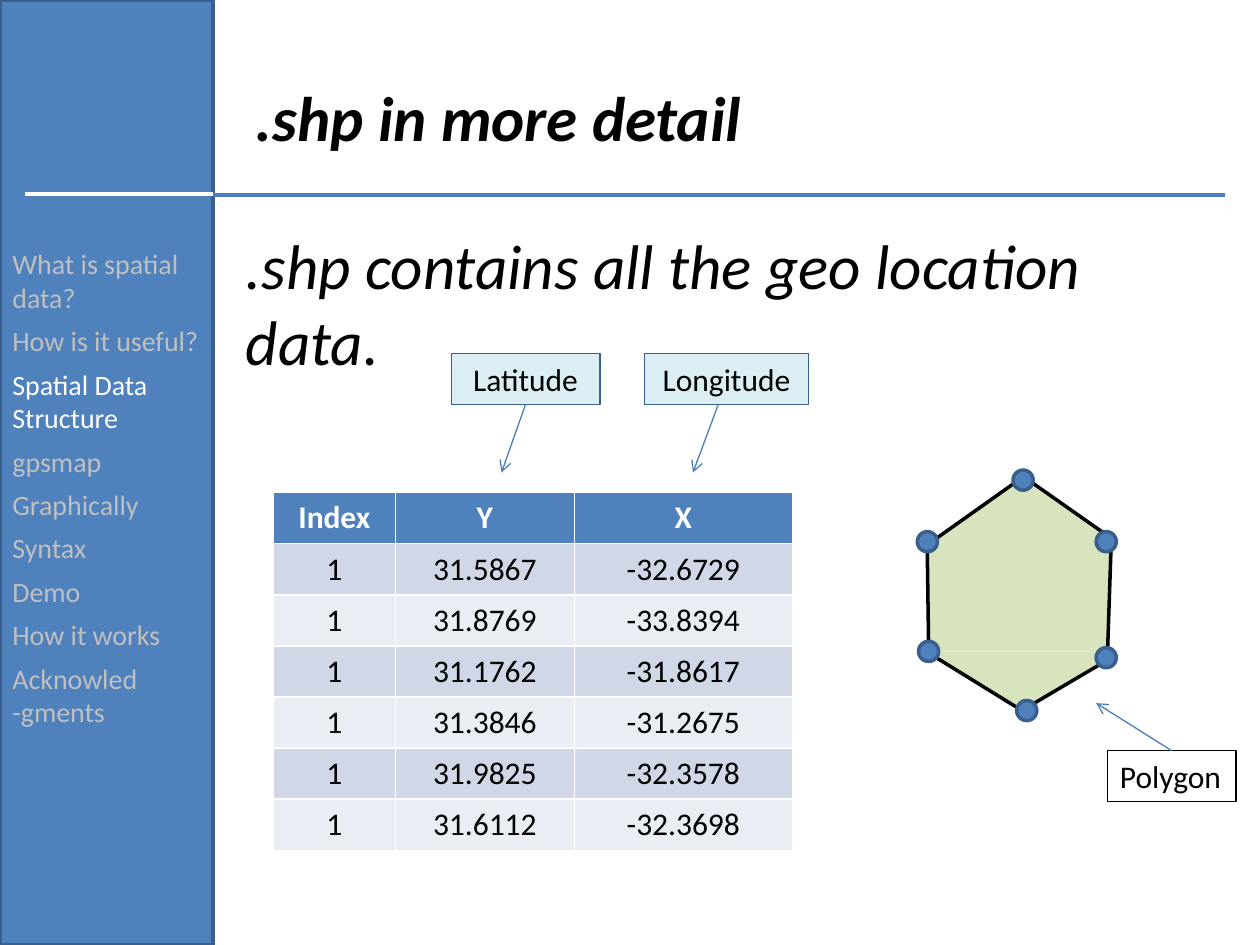
import dataclasses
import lxml.etree
import pptx
import pptx.dml.color
import pptx.enum.shapes
import pptx.enum.text
import pptx.oxml.ns
import pptx.util

Pt = pptx.util.Pt
RGB = pptx.dml.color.RGBColor.from_string
Kind = pptx.enum.shapes.MSO_SHAPE
Align = pptx.enum.text.PP_ALIGN
Anchor = pptx.enum.text.MSO_ANCHOR
qn = pptx.oxml.ns.qn


@dataclasses.dataclass(frozen=True)
class Theme:
    font: str = "Calibri"
    blue: str = "4F81BD"
    edge: str = "3A5F8C"
    rule: str = "4B7EBC"
    pale: str = "DBEEF4"
    green: str = "D7E4BD"
    bands: tuple = ("D0D8E8", "E9EDF4")
    gray: str = "BFBFBF"
    black: str = "000000"
    white: str = "FFFFFF"
    head: int = 36
    text: int = 18
    menu: int = 16


class Deck:
    """Holds the theme and the slide being drawn; lengths are in points."""

    def __init__(self, theme):
        self.theme = theme
        self.file = pptx.Presentation()
        self.file.slide_width, self.file.slide_height = Pt(720), Pt(540)
        self.slide = self.file.slides.add_slide(self.file.slide_layouts[1])

    def style(self, para, size, color, align=Align.LEFT, bold=False, italic=False):
        para.alignment = align
        font = para.font
        font.name, font.size = self.theme.font, Pt(size)
        font.bold, font.italic = bold, italic
        font.color.rgb = RGB(color)

    def holder(self, index, box, text, anchor, bold=False):
        """Fill a placeholder with one unbulleted italic paragraph."""
        shape = self.slide.placeholders[index]
        shape.left, shape.top, shape.width, shape.height = map(Pt, box)
        frame = shape.text_frame
        frame.text, frame.vertical_anchor = text, anchor
        para = frame.paragraphs[0]
        props = para._p.get_or_add_pPr()
        props.set("marL", "0")
        props.set("indent", "0")
        lxml.etree.SubElement(props, qn("a:buNone"))
        para.space_before = Pt(0)
        self.style(para, self.theme.head, self.theme.black, bold=bold, italic=True)

    def shape(self, kind, box, fill=None, edge=None, width=2.0):
        shape = self.slide.shapes.add_shape(kind, *map(Pt, box))
        shape.shadow.inherit = False
        if fill:
            shape.fill.solid()
            shape.fill.fore_color.rgb = RGB(fill)
        else:
            shape.fill.background()
        if edge:
            shape.line.color.rgb = RGB(edge)
            shape.line.width = Pt(width)
        else:
            shape.line.fill.background()
        return shape

    def label(self, box, text, fill, edge, align):
        shape = self.shape(Kind.RECTANGLE, box, fill, edge, 0.75)
        frame = shape.text_frame
        frame.text, frame.vertical_anchor = text, Anchor.TOP
        self.style(frame.paragraphs[0], self.theme.text, self.theme.black, align)
        return shape

    def line(self, start, end, color, width=2.0, arrow=False):
        line = self.slide.shapes.add_connector(
            pptx.enum.shapes.MSO_CONNECTOR.STRAIGHT, *map(Pt, start + end))
        line.line.color.rgb = RGB(color)
        line.line.width = Pt(width)
        props = line._element.spPr
        if arrow:
            tip = lxml.etree.SubElement(props.find(qn("a:ln")), qn("a:tailEnd"))
            tip.set("type", "arrow")
        lxml.etree.SubElement(props, qn("a:effectLst"))
        return line

    def menu(self, box, items, now, top):
        """Draw the side bar, with the current section lit."""
        theme = self.theme
        frame = self.shape(Kind.RECTANGLE, box, theme.blue, theme.edge).text_frame
        frame.word_wrap, frame.vertical_anchor = True, Anchor.TOP
        frame.margin_top = Pt(top)
        for i, item in enumerate(items):
            para = frame.add_paragraph() if i else frame.paragraphs[0]
            para.text = item
            para.space_before = Pt(5.6 if i else 0)
            self.style(para, theme.menu, theme.white if item == now else theme.gray)

    def table(self, left, top, widths, height, rows):
        theme = self.theme
        table = self.slide.shapes.add_table(
            len(rows), len(widths), Pt(left), Pt(top),
            Pt(sum(widths)), Pt(height * len(rows))).table
        for col, width in zip(table.columns, widths):
            col.width = Pt(width)
        for r, row in enumerate(rows):
            table.rows[r].height = Pt(height)
            for c, text in enumerate(row):
                cell = table.cell(r, c)
                cell.text = text
                cell.fill.solid()
                cell.fill.fore_color.rgb = RGB(theme.bands[(r - 1) % 2] if r else theme.blue)
                self.style(cell.text_frame.paragraphs[0], theme.text,
                           theme.black if r else theme.white, Align.CENTER, bold=r == 0)


MENU = ["What is spatial data?", "How is it useful?", "Spatial Data Structure",
        "gpsmap", "Graphically", "Syntax", "Demo", "How it works",
        "Acknowled -gments"]
POINTS = [("31.5867", "-32.6729"), ("31.8769", "-33.8394"), ("31.1762", "-31.8617"),
          ("31.3846", "-31.2675"), ("31.9825", "-32.3578"), ("31.6112", "-32.3698")]
SIDES = [((631.4, 378), (591.1, 401.8)), ((591.1, 410.4), (535, 375.8)),
         ((632.9, 372.2), (635, 309.6)), ((530.6, 366.5), (529.9, 315.4)),
         ((637.9, 309.6), (584.6, 272.2)), ((526.3, 313.9), (588.2, 270))]
NODES = [(578.9, 268.6), (524.2, 303.8), (524.9, 366.5),
         (581, 400.3), (626.4, 370.1), (626.4, 303.8)]


def polygon(deck):
    theme = deck.theme
    base = deck.shape(Kind.ISOSCELES_TRIANGLE, (526.3, 372.2, 111.6, 33.8), theme.green)
    base.rotation = 180
    base.adjustments[0] = 0.46
    deck.shape(Kind.ISOSCELES_TRIANGLE, (530.6, 273.6, 107.3, 36.7), theme.green)
    deck.shape(Kind.RECTANGLE, (529.9, 309.6, 104.4, 62.6), theme.green)
    for start, end in SIDES:
        deck.line(start, end, theme.black)
    for left, top in NODES:
        deck.shape(Kind.OVAL, (left, top, 11.5, 11.5), theme.blue, theme.edge)


def main():
    theme = Theme()
    deck = Deck(theme)
    deck.menu((0, 0, 121.7, 540), MENU, "Spatial Data Structure", 141)
    polygon(deck)
    deck.holder(0, (139, 21.6, 545, 90), ".shp in more detail", Anchor.MIDDLE, bold=True)
    deck.holder(1, (133.2, 126, 566.6, 393.1),
                ".shp contains all the geo location data.", Anchor.TOP)
    deck.line((121.7, 111.3), (699.8, 111.3), theme.rule)
    deck.line((14.4, 111), (121.7, 111), theme.white)
    rows = [("Index", "Y", "X")] + [("1", y, x) for y, x in POINTS]
    deck.table(156.2, 281.5, (69.8, 102.2, 124.6), 29.2, rows)

    area = deck.label((632.9, 429, 73.4, 29.1), "Polygon", None, theme.black, Align.LEFT)
    lat = deck.label((257.8, 202.1, 85, 29.1), "Latitude", theme.pale, theme.edge, Align.CENTER)
    deck.label((368.4, 202.1, 93.6, 29.1), "Longitude", theme.pale, theme.edge, Align.CENTER)
    deck.line((669.6, 429), (626.4, 401.8), theme.rule, 0.75, True).begin_connect(area, 0)
    deck.line((300.3, 231.2), (286.6, 270), theme.rule, 0.75, True).begin_connect(lat, 2)
    deck.line((410.4, 231.2), (396, 270), theme.rule, 0.75, True)
    deck.file.save("out.pptx")


if __name__ == "__main__":
    main()
